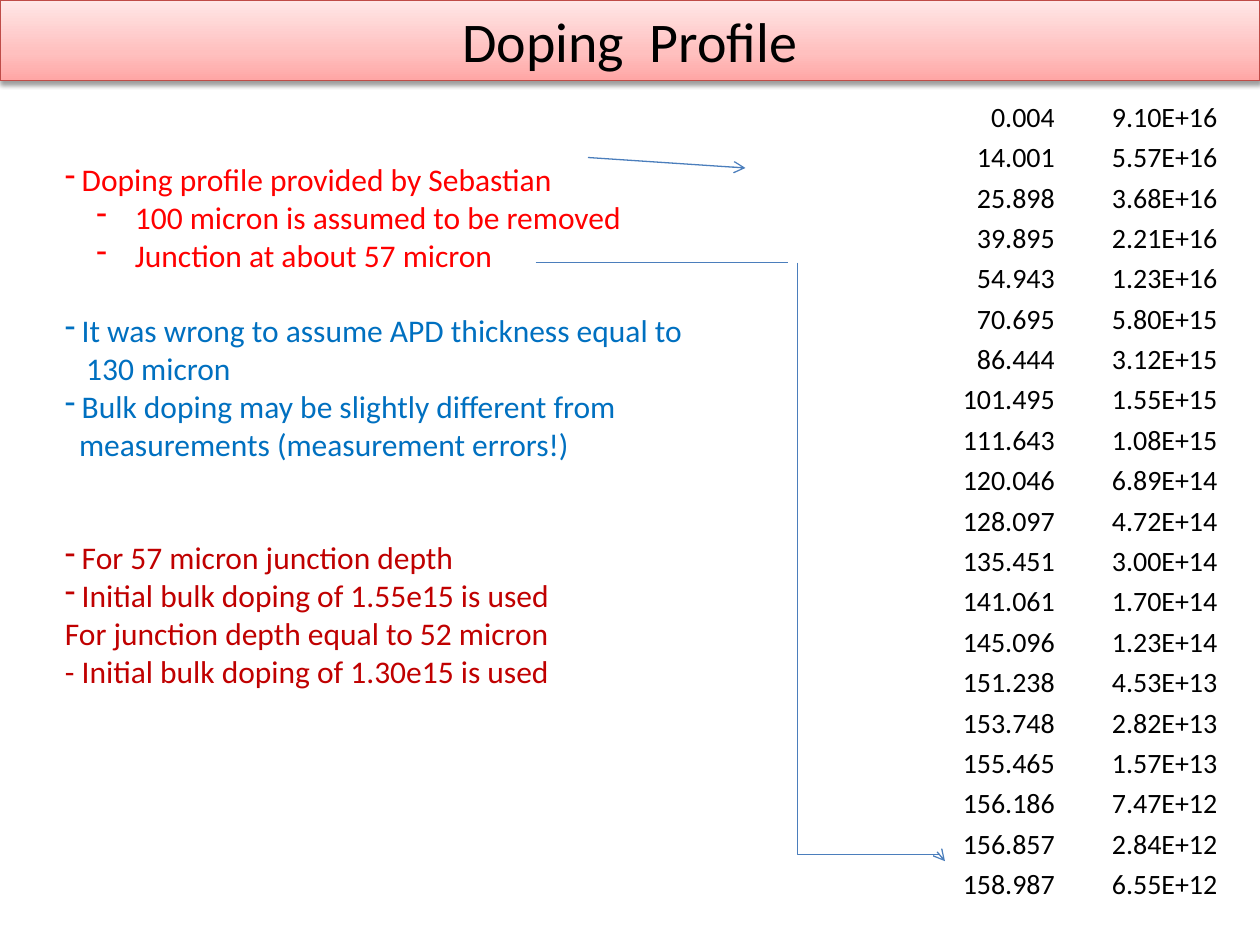
from dataclasses import dataclass

from lxml import etree
from pptx import Presentation
from pptx import util as u
from pptx.dml.color import RGBColor
from pptx.enum import shapes, text
from pptx.oxml import parse_xml
from pptx.oxml.ns import nsdecls, qn

FONT = "Calibri"
COLORS = {
    "black": "000000", "red": "FF0000", "blue": "0070C0", "dark_red": "C00000",
    "line": "4B7EBC", "banner_line": "BF4C48",
}
BANNER_STOPS = [(0, "FFA6A5"), (35, "FFC0BF"), (100, "FFE7E7")]
LINE_GAP = 21.6  # height of one line of notes


@dataclass
class Note:
    text: str
    color: str
    bullet: bool = True
    left: float = 9.6
    hang: float = 9.6
    gap_lines: int = 0


@dataclass
class Line:
    x1: float
    y1: float
    x2: float
    y2: float
    arrow: bool = False
    elbow: float | None = None  # position of the bend, in percent
    rotation: int = 0


NOTES = [
    Note("Doping profile provided by Sebastian", "red"),
    Note("100 micron is assumed to be removed", "red", left=40, hang=22),
    Note("Junction at about 57 micron", "red", left=40, hang=22),
    Note("It was wrong to assume APD thickness equal to", "blue", gap_lines=1),
    Note("130 micron", "blue", bullet=False, left=12.2, hang=0),
    Note("Bulk doping may be slightly different from", "blue"),
    Note("measurements (measurement errors!)", "blue", bullet=False, left=8.1, hang=0),
    Note("For 57 micron junction depth", "dark_red", gap_lines=2),
    Note("Initial bulk doping of 1.55e15 is used", "dark_red"),
    Note("For junction depth equal to 52 micron", "dark_red", bullet=False, left=0, hang=0),
    Note("- Initial bulk doping of 1.30e15 is used", "dark_red", bullet=False, left=0, hang=0),
]

PROFILE = [
    ("0.004", "9.10E+16"), ("14.001", "5.57E+16"), ("25.898", "3.68E+16"),
    ("39.895", "2.21E+16"), ("54.943", "1.23E+16"), ("70.695", "5.80E+15"),
    ("86.444", "3.12E+15"), ("101.495", "1.55E+15"), ("111.643", "1.08E+15"),
    ("120.046", "6.89E+14"), ("128.097", "4.72E+14"), ("135.451", "3.00E+14"),
    ("141.061", "1.70E+14"), ("145.096", "1.23E+14"), ("151.238", "4.53E+13"),
    ("153.748", "2.82E+13"), ("155.465", "1.57E+13"), ("156.186", "7.47E+12"),
    ("156.857", "2.84E+12"), ("158.987", "6.55E+12"),
]

LINES = [
    Line(336, 90, 426, 96, arrow=True),
    Line(668.9, 279, 326.9, 363.2, arrow=True, elbow=98.9, rotation=270),
    Line(306, 150, 450, 150),
]


def rgb(name: str) -> RGBColor:
    return RGBColor.from_string(COLORS[name])


def style(p, size: float, color: str) -> None:
    for r in p.runs:
        r.font.name = FONT
        r.font.size = u.Pt(size)
        r.font.color.rgb = rgb(color)


def add_banner(s) -> None:
    sp = s.shapes.add_shape(shapes.MSO_SHAPE.RECTANGLE, 0, 0, u.Pt(720), u.Pt(46.1))
    sp.line.color.rgb = rgb("banner_line")
    sp.line.width = u.Pt(0.75)
    stops = "".join(
        f'<a:gs pos="{pos * 1000}"><a:srgbClr val="{color}"/></a:gs>'
        for pos, color in BANNER_STOPS
    )
    ln = sp._element.spPr.find(qn("a:ln"))
    ln.addprevious(parse_xml(
        f'<a:gradFill {nsdecls("a")}><a:gsLst>{stops}</a:gsLst>'
        '<a:lin ang="16200000" scaled="0"/></a:gradFill>'
    ))
    ln.addnext(parse_xml(
        f'<a:effectLst {nsdecls("a")}><a:outerShdw blurRad="{u.Pt(3.1)}" '
        f'dist="{u.Pt(1.6)}" dir="5400000" rotWithShape="0"><a:srgbClr val="000000">'
        '<a:alpha val="38000"/></a:srgbClr></a:outerShdw></a:effectLst>'
    ))
    tf = sp.text_frame
    tf.text = "Doping  Profile"
    tf.vertical_anchor = text.MSO_ANCHOR.MIDDLE
    p = tf.paragraphs[0]
    p.alignment = text.PP_ALIGN.CENTER
    style(p, 32, "black")


def add_profile_table(s) -> None:
    frame = s.shapes.add_table(
        len(PROFILE), 2, u.Pt(509.8), u.Pt(54), u.Pt(185.8), u.Pt(462)
    )
    table = frame.table
    table.first_row = table.horz_banding = False
    for row, values in zip(table.rows, PROFILE):
        row.height = u.Pt(23.1)
        for cell, value in zip(row.cells, values):
            cell.text = value
            cell.fill.background()
            cell.vertical_anchor = text.MSO_ANCHOR.BOTTOM
            cell.margin_left = cell.margin_right = 0
            cell.margin_top = cell.margin_bottom = 0
            p = cell.text_frame.paragraphs[0]
            p.alignment = text.PP_ALIGN.RIGHT
            style(p, 16, "black")


def add_notes(s) -> None:
    tf = s.shapes.add_textbox(u.Pt(30), u.Pt(88), u.Pt(375), u.Pt(312.5)).text_frame
    tf.word_wrap = False
    for i, note in enumerate(NOTES):
        p = tf.add_paragraph() if i else tf.paragraphs[0]
        p.text = note.text
        style(p, 18, note.color)
        if note.gap_lines:
            p.space_before = u.Pt(note.gap_lines * LINE_GAP)
        pPr = p._p.get_or_add_pPr()
        pPr.set("marL", str(u.Pt(note.left)))
        pPr.set("indent", str(-u.Pt(note.hang)))
        if note.bullet:
            etree.SubElement(pPr, qn("a:buFontTx"))
            etree.SubElement(pPr, qn("a:buChar"), char="-")


def add_line(s, line: Line) -> None:
    """Draw a straight or bent connector; a bent one may be turned about its centre."""
    kinds = shapes.MSO_CONNECTOR
    kind = kinds.STRAIGHT if line.elbow is None else kinds.ELBOW
    ends = [u.Pt(v) for v in (line.x1, line.y1, line.x2, line.y2)]
    c = s.shapes.add_connector(kind, *ends)
    c.line.color.rgb = rgb("line")
    c.line.width = u.Pt(0.75)
    spPr = c._element.spPr
    if line.rotation:
        spPr.find(qn("a:xfrm")).set("rot", str(line.rotation * 60000))
    if line.elbow is not None:
        guides = spPr.find(qn("a:prstGeom")).find(qn("a:avLst"))
        etree.SubElement(guides, qn("a:gd"), name="adj1", fmla=f"val {line.elbow * 1000:.0f}")
    if line.arrow:
        etree.SubElement(spPr.find(qn("a:ln")), qn("a:tailEnd"), type="arrow")
    etree.SubElement(spPr, qn("a:effectLst"))


def main() -> None:
    prs = Presentation()
    prs.slide_width, prs.slide_height = u.Pt(720), u.Pt(540)
    s = prs.slides.add_slide(prs.slide_layouts[6])
    add_banner(s)
    add_profile_table(s)
    add_notes(s)
    for line in LINES:
        add_line(s, line)
    prs.save("out.pptx")


if __name__ == "__main__":
    main()
